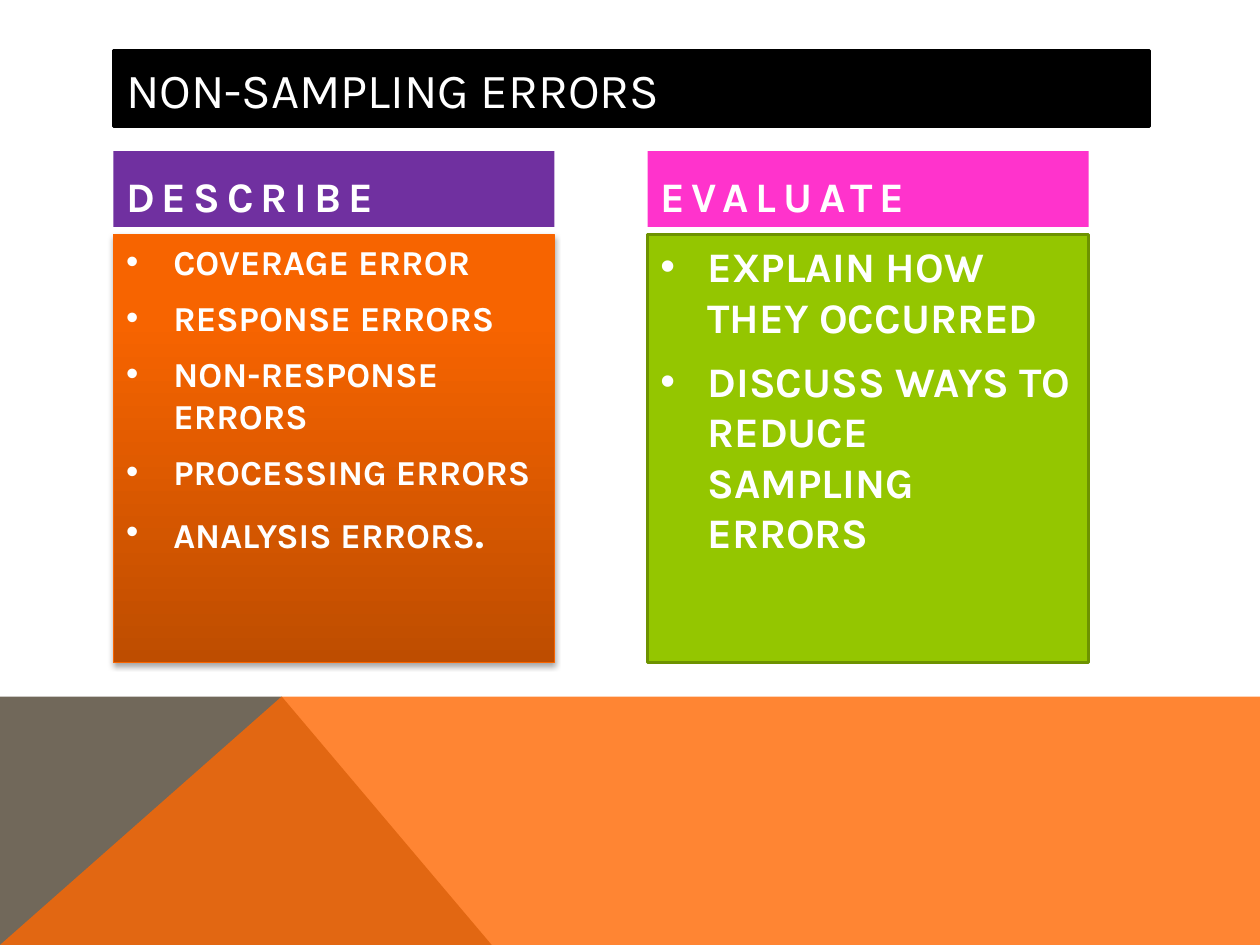
from lxml.etree import SubElement
from pptx import Presentation
from pptx.dml.color import RGBColor
from pptx.enum.text import MSO_ANCHOR, MSO_AUTO_SIZE, PP_ALIGN
from pptx.oxml.ns import qn
from pptx.util import Pt

WIDE, HIGH = 720, 540
LEFT, STEP, COL = 64.8, 305.3, 252
HEAD = dict(size=Pt(24), bold=True)
COLUMNS = [
    dict(head="DESCRIBE", hue="7030A0", size=20, line=("F96500", 0.75),
         items=["COVERAGE ERROR", "RESPONSE ERRORS", "NON-RESPONSE ERRORS",
                "PROCESSING ERRORS", "ANALYSIS ERRORS"]),
    dict(head="EVALUATE", hue="FF33CC", size=24, line=("6D9200", 2),
         items=["EXPLAIN HOW THEY OCCURRED",
                "DISCUSS WAYS TO REDUCE SAMPLING ERRORS"]),
]


def color(code):
    return RGBColor.from_string(code)


def style(item, values):
    for name, value in values.items():
        setattr(item, name, value)


def paint(shape, code):
    shape.fill.solid()
    shape.fill.fore_color.rgb = color(code)


def edge(shape, code, width):
    shape.line.color.rgb = color(code)
    shape.line.width = Pt(width)


def place(shape, left, top, width, height, anchor):
    style(shape, dict(left=Pt(left), top=Pt(top),
                      width=Pt(width), height=Pt(height)))
    style(shape.text_frame, dict(word_wrap=True, vertical_anchor=anchor,
                                 auto_size=MSO_AUTO_SIZE.NONE))


def write(para, text, values):
    run = para.add_run()
    run.text = text
    style(run.font, dict(name="Karla") | values)
    run.font.color.rgb = color("FFFFFF")
    style(para, dict(alignment=PP_ALIGN.LEFT, line_spacing=1.0))
    return run


def bullet(para):
    """Give the paragraph a hanging round bullet."""
    props = para._p.get_or_add_pPr()
    props.set("marL", str(Pt(27)))
    props.set("indent", str(Pt(-27)))
    SubElement(props, qn("a:buFont"), typeface="Arial")
    SubElement(props, qn("a:buChar"), char="•")


def fade(shape):
    """Fill from dark at the bottom to bright near the top."""
    shape.fill.gradient()
    shape.fill.gradient_angle = 90
    stops = zip(shape.fill.gradient_stops, [(0, "BE4D00"), (0.8, "F76400")])
    for stop, (spot, code) in stops:
        stop.position = spot
        stop.color.rgb = color(code)


def shade(shape):
    """Drop a soft shadow straight down."""
    shape.shadow.inherit = False
    effects = shape.element.spPr.find(qn("a:effectLst"))
    outer = SubElement(effects, qn("a:outerShdw"), blurRad=str(Pt(3.1)),
                       dist=str(Pt(1.8)), dir="5400000", rotWithShape="0")
    tone = SubElement(outer, qn("a:srgbClr"), val="000000")
    SubElement(tone, qn("a:alpha"), val="35000")


def facet(slide, points, code, alpha=100):
    """Draw a filled polygon without an outline."""
    build = slide.shapes.build_freeform(*points[0], scale=Pt(1))
    build.add_line_segments(points[1:], close=True)
    shape = build.convert_to_shape()
    shape.shadow.inherit = False
    shape.line.fill.background()
    paint(shape, code)
    if alpha < 100:
        tone = shape.element.spPr.find(".//" + qn("a:srgbClr"))
        SubElement(tone, qn("a:alpha"), val=str(alpha * 1000))


def title(shape):
    place(shape, LEFT, 28.8, 592, 43.5, MSO_ANCHOR.MIDDLE)
    paint(shape, "000000")
    edge(shape, "000000", 2)
    write(shape.text_frame.paragraphs[0], "NON-SAMPLING ERRORS",
          dict(size=Pt(28), bold=False))


def header(shape, left, text, hue):
    place(shape, left, 86.4, COL, 43.2, MSO_ANCHOR.BOTTOM)
    paint(shape, hue)
    para = shape.text_frame.paragraphs[0]
    para.space_before = Pt(8)
    run = write(para, text, HEAD)
    run.font._element.set("spc", "400")


def panel(shape, left, items, size, line):
    place(shape, left, 133.9, COL, 244.8, MSO_ANCHOR.TOP)
    edge(shape, *line)
    frame = shape.text_frame
    for index, text in enumerate(items):
        para = frame.add_paragraph() if index else frame.paragraphs[0]
        para.space_before = Pt(8)
        write(para, text, HEAD | dict(size=Pt(size)))
        bullet(para)


def main():
    deck = Presentation()
    style(deck, dict(slide_width=Pt(WIDE), slide_height=Pt(HIGH)))
    slide = deck.slides.add_slide(deck.slide_layouts[4])
    top, peak = 397.5, 160.8
    facet(slide, [(0, HIGH), (0, top), (peak, top), (281.3, HIGH)], "71685A")
    facet(slide, [(0, HIGH), (peak, top), (WIDE, top), (WIDE, HIGH)],
          "FF6700", 80)

    title(slide.shapes.title)
    heads, lists = [[slide.placeholders[i] for i in pair]
                    for pair in ((1, 3), (2, 4))]
    for index, col in enumerate(COLUMNS):
        left = LEFT + index * STEP
        header(heads[index], left, col["head"], col["hue"])
        panel(lists[index], left, col["items"], col["size"], col["line"])
    first, second = lists
    write(first.text_frame.paragraphs[-1], ".", HEAD)
    fade(first)
    shade(first)
    paint(second, "94C600")
    deck.save("out.pptx")


if __name__ == "__main__":
    main()
